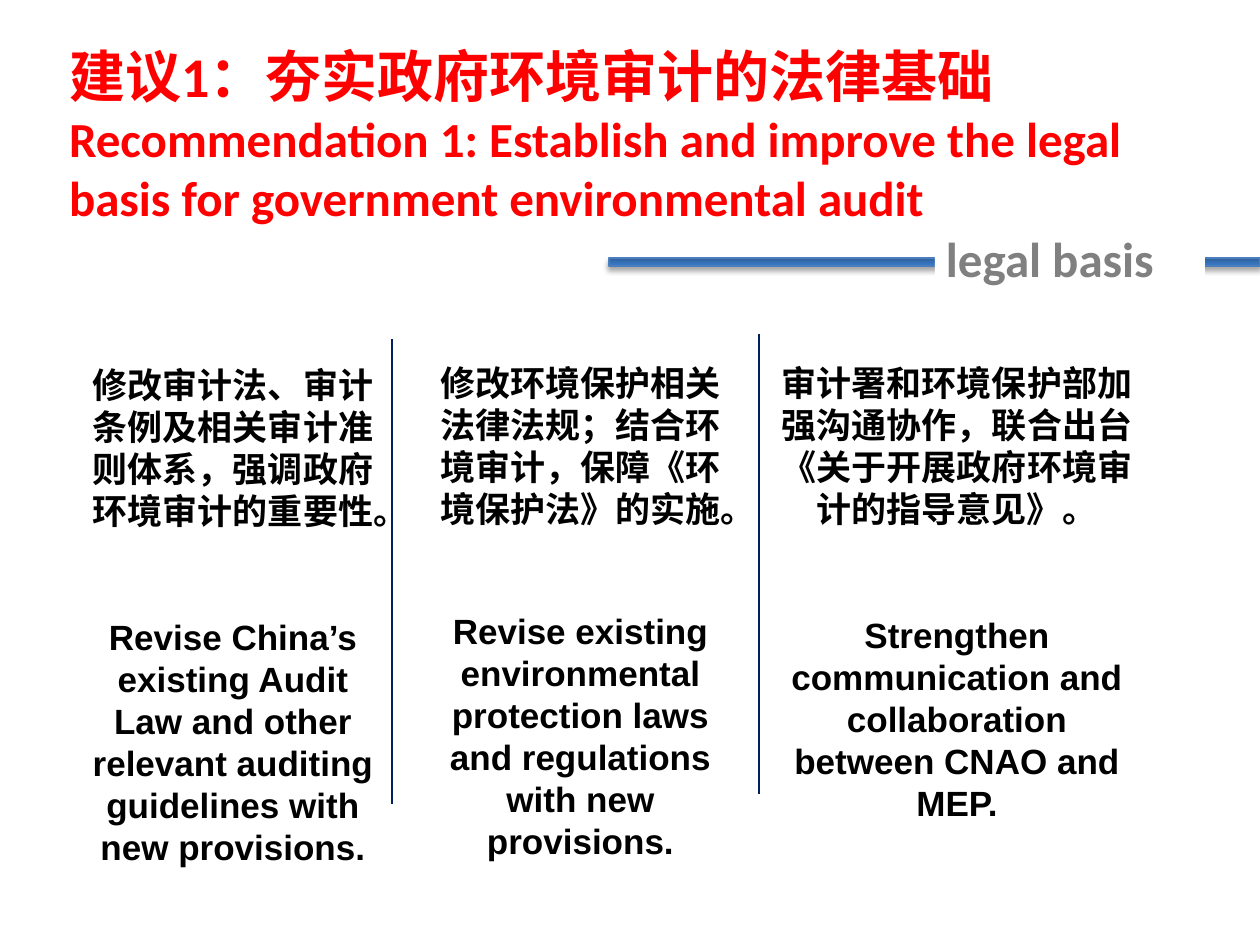
from lxml import etree
from pptx import Presentation
from pptx.dml.color import RGBColor
from pptx.enum.shapes import MSO_CONNECTOR, MSO_SHAPE
from pptx.enum.text import MSO_ANCHOR, MSO_AUTO_SIZE, PP_ALIGN
from pptx.oxml import parse_xml
from pptx.oxml.ns import nsdecls, qn
from pptx.util import Pt

LEFT, CENTER = PP_ALIGN.LEFT, PP_ALIGN.CENTER
RECTANGLE, STRAIGHT = MSO_SHAPE.RECTANGLE, MSO_CONNECTOR.STRAIGHT
TITLE_ONLY = 5

COLUMNS = [
    ((74, 358, 318, 520), 48,
     "修改审计法、审计条例及相关审计准则体系，强调政府环境审计的重要性。",
     "Revise China’s existing Audit Law and other relevant auditing guidelines "
     "with new provisions."),
    ((412, 356, 337, 517), 46,
     "修改环境保护相关法律法规；结合环境审计，保障《环境保护法》的实施。",
     "Revise existing environmental protection laws and regulations "
     "with new provisions."),
    ((769, 356, 376, 477), 48,
     "审计署和环境保护部加强沟通协作，联合出台《关于开展政府环境审计的指导意见》。",
     "Strengthen communication and collaboration between CNAO and MEP."),
]
DIVIDERS = [(392, 339, 804), (759, 334, 794)]  # x, top, bottom


def px(value):
    return round(value * 914400 / 126)


def color(hex_string):
    return RGBColor.from_string(hex_string)


def add_span(para, text, size=20, font="Arial", fill="000000"):
    span = para.add_run()
    span.text = text
    span.font.size = Pt(size)
    span.font.name = font
    span.font.bold = True
    span.font.color.rgb = color(fill)


def set_frame(shape, wrap=True):
    frame = shape.text_frame
    frame.word_wrap = wrap
    frame.auto_size = MSO_AUTO_SIZE.NONE
    frame.vertical_anchor = MSO_ANCHOR.TOP
    frame.margin_left = frame.margin_right = px(11)
    frame.margin_top = frame.margin_bottom = px(5)
    return frame


def add_title(page, left, top, width, height):
    title = page.shapes.title
    title.left, title.top, title.width, title.height = map(
        px, (left, top, width, height))
    para = set_frame(title).paragraphs[0]
    para.alignment = LEFT
    red = "FF0000"
    add_span(para, "建议", size=32, font="Times New Roman", fill=red)
    add_span(para, "1", size=32, font="Calibri", fill=red)
    add_span(para, "：夯实政府环境审计的法律基础", size=32,
             font="Times New Roman", fill=red)
    para.add_line_break()
    add_span(para, "Recommendation 1: Establish and improve the legal basis "
             "for government environmental audit", size=28, font="Calibri", fill=red)


def add_banner(page, left, top, width, height):
    """Place a shaded bar with a label that interrupts it."""
    bar = page.shapes.add_shape(
        RECTANGLE, px(left), px(top + 35), px(width), px(8))
    bar.fill.gradient()
    bar.fill.gradient_angle = 270
    for stop, shade in zip(bar.fill.gradient_stops, ("2F5F99", "3A7CCB")):
        stop.color.rgb = color(shade)
    bar.line.color.rgb = color("4B7EBC")
    bar.line.width = Pt(0.75)
    bar._element.spPr.append(parse_xml(
        f'<a:effectLst {nsdecls("a")}><a:outerShdw blurRad="{Pt(3.1)}" '
        f'dist="{Pt(1.8)}" dir="5400000" rotWithShape="0">'
        '<a:srgbClr val="000000"><a:alpha val="35000"/></a:srgbClr>'
        '</a:outerShdw></a:effectLst>'))

    label = page.shapes.add_shape(
        RECTANGLE, px(left + 326), px(top), px(270), px(height))
    label.shadow.inherit = False
    label.fill.solid()
    label.fill.fore_color.rgb = color("FFFFFF")
    label.line.fill.background()
    para = set_frame(label, wrap=False).paragraphs[0]
    para.alignment = LEFT
    add_span(para, "legal basis", size=28, font="Calibri", fill="808080")


def add_column(page, box, gap, chinese, english):
    frame = set_frame(page.shapes.add_textbox(*map(px, box)))
    first, second = frame.paragraphs[0], frame.add_paragraph()
    first.alignment = second.alignment = CENTER
    second.space_before = Pt(gap)
    add_span(first, chinese)
    add_span(second, english)


def add_divider(page, x, top, bottom):
    line = page.shapes.add_connector(STRAIGHT, px(x), px(top), px(x), px(bottom))
    line.line.color.rgb = color("002060")
    line.line.width = Pt(0.75)
    etree.SubElement(line._element.spPr, qn("a:effectLst"))


def main():
    deck = Presentation()
    deck.slide_width, deck.slide_height = px(1260), px(945)
    page = deck.slides.add_slide(deck.slide_layouts[TITLE_ONLY])
    add_title(page, 58, 36, 1134, 266)
    add_banner(page, 609, 223, 651, 71)
    for column in COLUMNS:
        add_column(page, *column)
    for divider in DIVIDERS:
        add_divider(page, *divider)
    deck.save("out.pptx")


if __name__ == "__main__":
    main()
